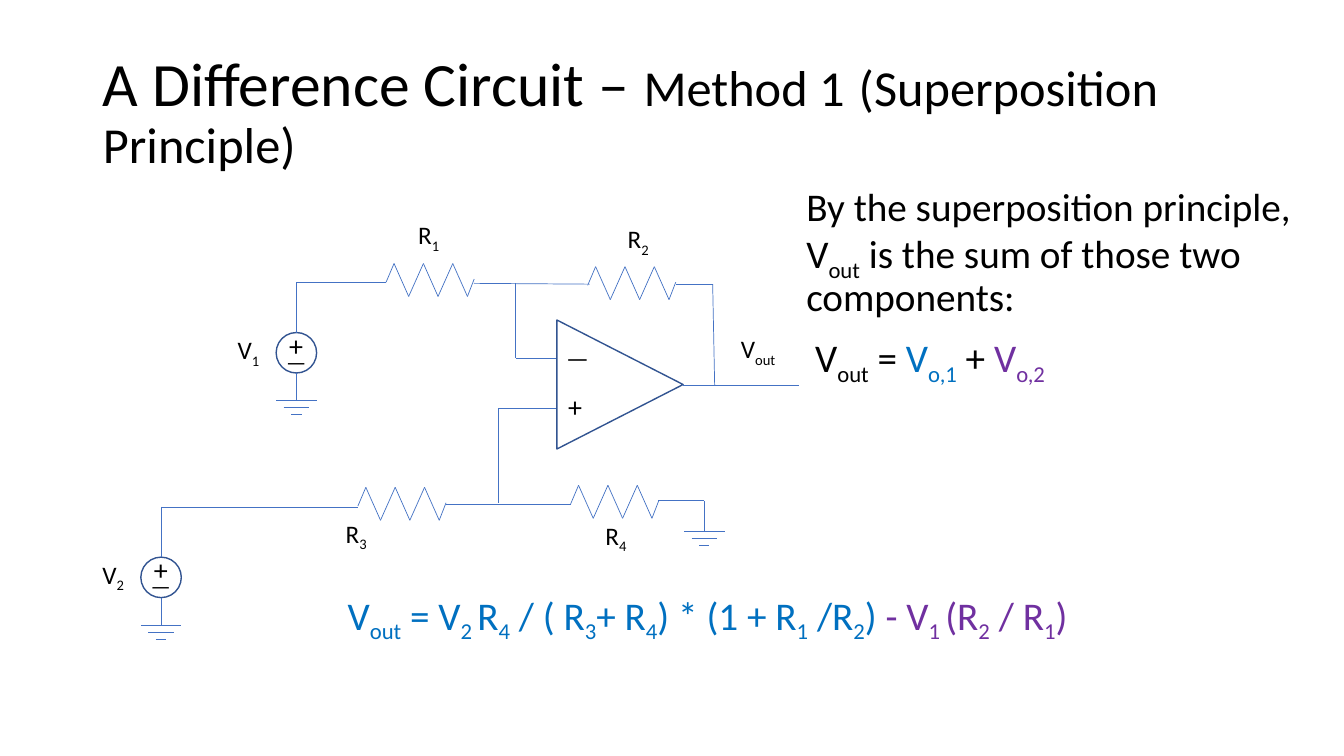
from dataclasses import dataclass
from itertools import pairwise

from lxml.etree import SubElement
from pptx import Presentation
from pptx.dml.color import RGBColor
from pptx.enum.shapes import MSO_CONNECTOR, MSO_SHAPE
from pptx.enum.text import MSO_ANCHOR, MSO_AUTO_SIZE, PP_ALIGN
from pptx.oxml.ns import qn
from pptx.util import Cm, Pt


@dataclass(frozen=True)
class Theme:
    font: str = "Calibri"
    ink: RGBColor = RGBColor(0x00, 0x00, 0x00)
    wire: RGBColor = RGBColor(0x44, 0x72, 0xC4)
    outline: RGBColor = RGBColor(0x32, 0x54, 0x91)
    blue: RGBColor = RGBColor(0x00, 0x70, 0xC0)
    purple: RGBColor = RGBColor(0x70, 0x30, 0xA0)
    title: Pt = Pt(44)
    subtitle: Pt = Pt(36)
    body: Pt = Pt(28)
    plus: Pt = Pt(20)
    label: Pt = Pt(18)
    minus: Pt = Pt(16)


theme = Theme()
deck = Presentation()
deck.slide_width, deck.slide_height = Cm(33.87), Cm(19.05)
page = deck.slides.add_slide(deck.slide_layouts[5])


def add_text(left, top, width, height, size, *lines):
    """Each line is a list of (colour, text); bars in the text enclose subscripts."""
    box = page.shapes.add_textbox(Cm(left), Cm(top), Cm(width), Cm(height))
    frame = box.text_frame
    frame.word_wrap = True
    for number, spans in enumerate(lines):
        para = frame.add_paragraph() if number else frame.paragraphs[0]
        para.font.name, para.font.size = theme.font, size
        para.font.color.rgb = spans[0][0]
        for colour, text in spans:
            for index, part in enumerate(text.split("|")):
                if not part:
                    continue
                span = para.add_run()
                span.text = part
                if len(spans) > 1:
                    span.font.color.rgb = colour
                if index % 2:
                    span._r.get_or_add_rPr().set("baseline", "-25000")
    return frame


def add_wire(*points):
    for (x1, y1), (x2, y2) in pairwise(points):
        line = page.shapes.add_connector(
            MSO_CONNECTOR.STRAIGHT, Cm(x1), Cm(y1), Cm(x2), Cm(y2))
        line.line.color.rgb, line.line.width = theme.wire, Pt(0.5)
        SubElement(line._element.spPr, qn("a:effectLst"))


# Title
title = page.shapes.title
title.left, title.top, title.width, title.height = Cm(2.34), Cm(1.02), Cm(29.21), Cm(3.68)
title.text_frame.auto_size = MSO_AUTO_SIZE.NONE
title.text_frame.vertical_anchor = MSO_ANCHOR.MIDDLE
para = title.text_frame.paragraphs[0]
para.alignment, para.line_spacing = PP_ALIGN.LEFT, 0.9
para.font.name, para.font.color.rgb = theme.font, theme.ink
for text, size in (("A Difference Circuit – ", theme.title), ("Method 1", theme.subtitle),
                   (" ", theme.title), ("(Superposition Principle)", theme.subtitle)):
    span = para.add_run()
    span.text, span.font.size = text, size

# Outlines of the amplifier and the two voltage sources
sources = {"V|1|": (7.47, 8.89), "V|2|": (4.06, 14.55)}
radius = 0.51
outlines = [(MSO_SHAPE.ISOSCELES_TRIANGLE, 14, 8.1, 3.25, 3.18, 90)]
outlines += [(MSO_SHAPE.OVAL, x - radius, y - radius, 2 * radius, 2 * radius, 0)
             for x, y in sources.values()]
for kind, left, top, width, height, turn in outlines:
    shape = page.shapes.add_shape(kind, Cm(left), Cm(top), Cm(width), Cm(height))
    shape.rotation = turn
    shape.shadow.inherit = False
    shape.fill.background()
    shape.line.color.rgb, shape.line.width = theme.outline, Pt(1)

# Source leads, signs and names
for name, (x, y) in sources.items():
    add_wire((x, y - 1.78), (x, y - radius))
    add_wire((x, y + radius), (x, y + 1.19))
    add_text(x - 0.43, y - 0.74, 0.86, 1.12, theme.plus, [(theme.ink, "+")])
    add_text(x - 0.51, y - 0.25, 0.86, 0.94, theme.minus, [(theme.ink, "—")])
    add_text(x - 1.73, y - 0.58, 1.45, 1.02, theme.label, [(theme.ink, name)])

# Amplifier input signs
add_text(14.02, 8.51, 0.86, 1.02, theme.label, [(theme.ink, "—")])
add_text(14.07, 9.7, 0.86, 1.12, theme.plus, [(theme.ink, "+")])

# Resistors R1 to R4
for x, y in ((9.73, 7.11), (14.81, 7.19), (9.02, 12.75), (14.38, 12.7)):
    zigzag = [(x + 0.2 + 0.37 * i, y + (0.36 if i % 2 else -0.47)) for i in range(6)]
    add_wire((x, y), *zigzag, (x + 2.22, y - 0.08))

# Grounds
for x, y in ((7.47, 10.08), (4.06, 15.75), (17.75, 13.39)):
    for step, half in enumerate((0.51, 0.32, 0.13)):
        add_wire((x - half, y + 0.18 * step), (x + half, y + 0.18 * step))

# Wires between the parts
for route in (
    [(7.47, 7.11), (9.73, 7.11)],
    [(11.94, 7.14), (14.86, 7.16)],
    [(13, 7.14), (13, 9.02), (14.02, 9.02)],
    [(12.55, 12.67), (12.55, 10.29), (14.02, 10.29)],
    [(17.2, 9.7), (20.14, 9.7)],
    [(18.01, 9.7), (17.96, 7.16), (17.04, 7.16)],
    [(4.06, 12.78), (9.02, 12.78)],
    [(11.23, 12.7), (14.38, 12.7)],
    [(16.59, 12.62), (17.75, 12.62), (17.75, 13.39)],
):
    add_wire(*route)

# Names of the resistors and the output
for name, left, top in (("R|1|", 10.29, 5.41), ("R|2|", 15.57, 5.51), ("R|3|", 8.46, 12.93),
                        ("R|4|", 15.01, 12.98), ("V|out|", 18.42, 8.28)):
    add_text(left, top, 1.45, 1.02, theme.label, [(theme.ink, name)])

# Explanation and result
explanation = add_text(
    20.07, 4.6, 13.92, 5.69, theme.body,
    [(theme.ink, "By the superposition principle, V|out| is the sum of those two components:")],
    [(theme.ink, " V|out| = "), (theme.blue, "V|o,1|"), (theme.ink, " + "),
     (theme.purple, "V|o,2|")])
result = add_text(
    8.51, 14.78, 19.91, 1.93, theme.body,
    [(theme.blue, "V|out| = V|2 |R|4| / ( R|3|+ R|4|) * (1 + R|1| /R|2|) "),
     (theme.purple, "- V|1 |(R|2| / R|1|)")])
for para in explanation.paragraphs + result.paragraphs:
    para.line_spacing, para.space_before = 0.9, Pt(10)

deck.save("out.pptx")
